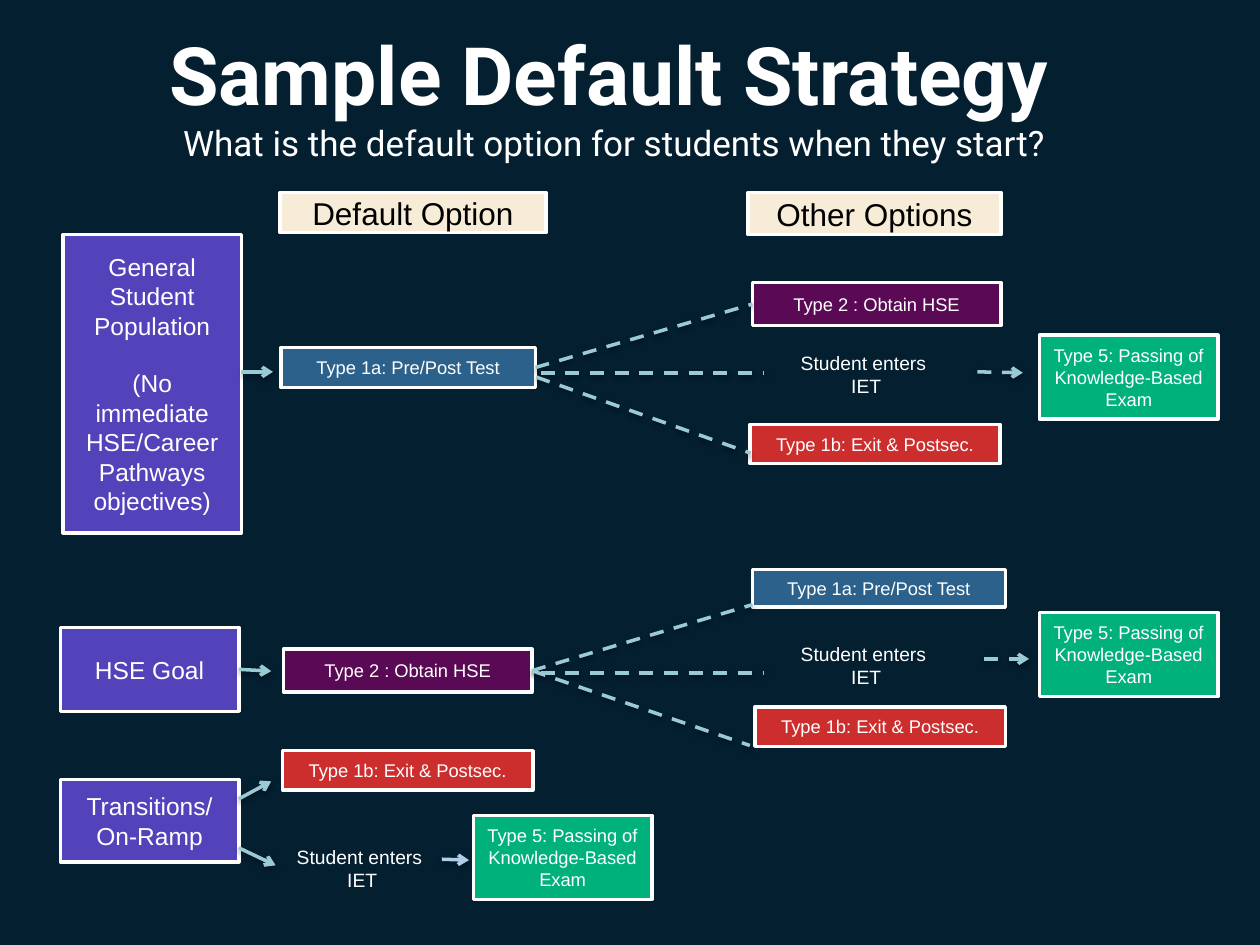
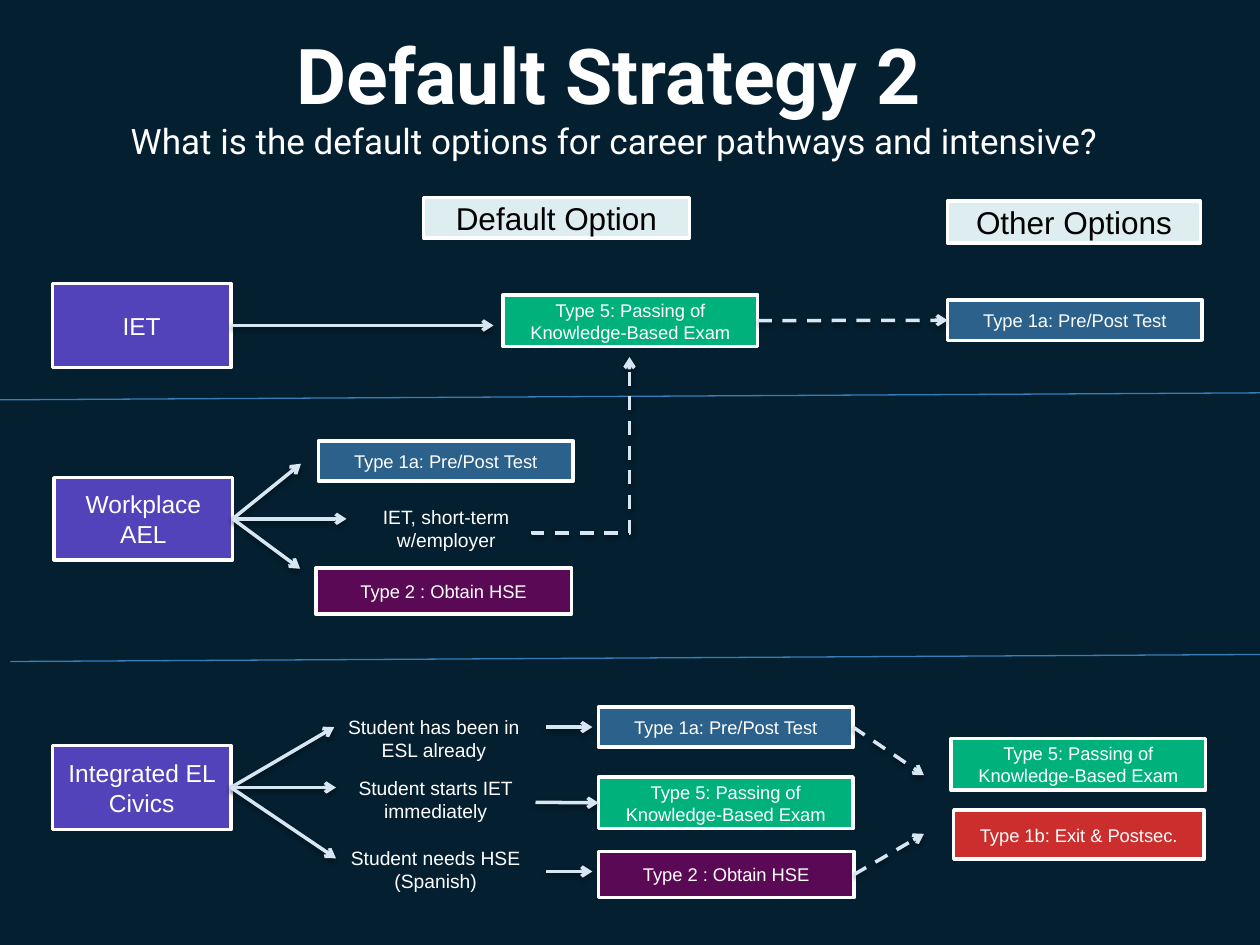
from dataclasses import dataclass

import pptx
import pptx.dml.color
import pptx.enum.dml
import pptx.enum.shapes
import pptx.enum.text
import pptx.oxml
import pptx.oxml.ns
import pptx.util
from pptx.util import Pt

# Shared look
BACKGROUND = "041F30"
WHITE = "FFFFFF"
BLACK = "000000"
TEAL_LINE = "9ACAD3"
BLUE_LINE = "AECDE6"
PALE_LINE = "D6E6F2"
DIVIDER = "367EB9"
GROUP_FILL = "5243BB"
SAND = "F7ECD7"
ICE = "DDEDF0"
SNAP = 1.5  # points between a line end and a side's middle that count as joined


@dataclass(frozen=True)
class BoxStyle:
    fill: str
    color: str = WHITE
    size: float = 10.5


@dataclass(frozen=True)
class Box:
    text: str
    style: BoxStyle
    left: float
    top: float
    width: float
    height: float

    def side_middles(self) -> list[tuple[float, float]]:
        """Middles of the top, left, bottom and right sides."""
        middle_x, middle_y = self.left + self.width / 2, self.top + self.height / 2
        return [(middle_x, self.top), (self.left, middle_y),
                (middle_x, self.top + self.height), (self.left + self.width, middle_y)]


@dataclass(frozen=True)
class Caption:
    text: str
    left: float
    top: float
    width: float = 114
    height: float = 34


@dataclass(frozen=True)
class Line:
    begin: tuple[float, float]
    end: tuple[float, float]
    color: str
    arrow: bool = True
    dashed: bool = False
    width: float = 2
    shadow: bool = True


@dataclass(frozen=True)
class TitleText:
    heading: str
    heading_size: float
    subtitle: str


# Kinds of box
def group(text: str, left: float, top: float, height: float = 48) -> Box:
    return Box(text, BoxStyle(GROUP_FILL, size=14), left, top, 102, height)


def header(text: str, fill: str, left: float, top: float,
           width: float, height: float) -> Box:
    return Box(text, BoxStyle(fill, BLACK, 18), left, top, width, height)


def pre_post_test(left: float, top: float, width: float = 145.5, height: float = 23) -> Box:
    return Box("Type 1a: Pre/Post Test", BoxStyle("2B618B"), left, top, width, height)


def exit_postsec(left: float, top: float, height: float = 22.5) -> Box:
    return Box("Type 1b: Exit & Postsec.", BoxStyle("CC2E2E"), left, top, 143, height)


def obtain_hse(left: float, top: float, width: float = 142, height: float = 24.5) -> Box:
    return Box("Type 2 : Obtain HSE", BoxStyle("5A0A54"), left, top, width, height)


def knowledge_exam(left: float, top: float, width: float = 102, height: float = 48) -> Box:
    return Box("Type 5: Passing of Knowledge-Based Exam", BoxStyle("01B17B"),
               left, top, width, height)


# Drawing
def rgb(color: str) -> pptx.dml.color.RGBColor:
    return pptx.dml.color.RGBColor.from_string(color)


def write_text(paragraph, text: str, *, size: float, color: str = WHITE,
               font: str = "Arial", bold: bool = False) -> None:
    """Add centred text; a newline becomes a line break."""
    paragraph.alignment = pptx.enum.text.PP_ALIGN.CENTER
    for index, part in enumerate(text.split("\n")):
        if index:
            paragraph.add_line_break()
        if part:
            run = paragraph.add_run()
            run.text = part
            run.font.size = Pt(size)
            run.font.name = font
            run.font.bold = bold
            run.font.color.rgb = rgb(color)


def prepare_frame(shape):
    text_frame = shape.text_frame
    text_frame.word_wrap = True
    text_frame.auto_size = pptx.enum.text.MSO_AUTO_SIZE.NONE
    text_frame.vertical_anchor = pptx.enum.text.MSO_ANCHOR.MIDDLE
    return text_frame


def place(item: Box | Caption) -> tuple:
    return Pt(item.left), Pt(item.top), Pt(item.width), Pt(item.height)


def draw_title(slide, title: TitleText) -> None:
    shape = slide.shapes.title
    shape.left, shape.top, shape.width, shape.height = Pt(47), Pt(24), Pt(613), Pt(60)
    text_frame = prepare_frame(shape)
    text_frame.margin_left = text_frame.margin_right = Pt(7.2)
    text_frame.margin_top = text_frame.margin_bottom = Pt(7.2)
    paragraph = text_frame.paragraphs[0]
    paragraph.line_spacing = 1.0
    write_text(paragraph, title.heading + " \n", size=title.heading_size,
               font="Roboto", bold=True)
    write_text(paragraph, title.subtitle, size=20, font="Roboto")


def draw_box(slide, box: Box):
    shape = slide.shapes.add_shape(pptx.enum.shapes.MSO_SHAPE.RECTANGLE, *place(box))
    shape.shadow.inherit = False
    shape.fill.solid()
    shape.fill.fore_color.rgb = rgb(box.style.fill)
    shape.line.color.rgb = rgb(WHITE)
    shape.line.width = Pt(2)
    text_frame = prepare_frame(shape)
    for index, text in enumerate(box.text.split("\n")):
        paragraph = text_frame.add_paragraph() if index else text_frame.paragraphs[0]
        if index:
            paragraph.space_before = Pt(16)
        write_text(paragraph, text, size=box.style.size, color=box.style.color)
    return shape


def draw_caption(slide, caption: Caption) -> None:
    text_frame = prepare_frame(slide.shapes.add_textbox(*place(caption)))
    write_text(text_frame.paragraphs[0], caption.text, size=11)


def format_line(connector, line: Line) -> None:
    connector.line.color.rgb = rgb(line.color)
    connector.line.width = Pt(line.width)
    if line.dashed:
        connector.line.dash_style = pptx.enum.dml.MSO_LINE.DASH
    namespace = pptx.oxml.ns.nsdecls("a")
    properties = connector.element.spPr
    if line.arrow:
        properties.find(pptx.oxml.ns.qn("a:ln")).append(
            pptx.oxml.parse_xml(f'<a:tailEnd {namespace} type="arrow"/>'))
    shadow = ('<a:outerShdw blurRad="39370" dist="20320" dir="5400000" rotWithShape="0">'
              '<a:srgbClr val="000000"><a:alpha val="38000"/></a:srgbClr></a:outerShdw>')
    properties.append(pptx.oxml.parse_xml(
        f'<a:effectLst {namespace}>{shadow if line.shadow else ""}</a:effectLst>'))


def add_line(slide, line: Line, kind):
    return slide.shapes.add_connector(kind, *(Pt(value) for value in line.begin + line.end))


def draw_line(slide, line: Line, drawn_boxes: list) -> None:
    """Draw a straight line, joined to boxes whose side middles it meets."""
    connector = add_line(slide, line, pptx.enum.shapes.MSO_CONNECTOR.STRAIGHT)
    for point, connect in ((line.begin, connector.begin_connect),
                           (line.end, connector.end_connect)):
        for box, shape in drawn_boxes:
            for site, (x, y) in enumerate(box.side_middles()):
                if abs(x - point[0]) <= SNAP and abs(y - point[1]) <= SNAP:
                    connect(shape, site)
    format_line(connector, line)


def draw_elbow(slide, line: Line, adjustment: int) -> None:
    """Draw an elbow line turned by a quarter."""
    connector = add_line(slide, line, pptx.enum.shapes.MSO_CONNECTOR.ELBOW)
    properties = connector.element.spPr
    properties.find(pptx.oxml.ns.qn("a:xfrm")).set("rot", "5400000")
    geometry = properties.find(pptx.oxml.ns.qn("a:prstGeom"))
    for child in list(geometry):
        geometry.remove(child)
    geometry.append(pptx.oxml.parse_xml(
        f'<a:avLst {pptx.oxml.ns.nsdecls("a")}>'
        f'<a:gd name="adj1" fmla="val {adjustment}"/></a:avLst>'))
    format_line(connector, line)


def build_slide(presentation, title: TitleText, boxes: list[Box],
                captions: list[Caption], lines: list[Line]):
    slide = presentation.slides.add_slide(presentation.slide_layouts[0])
    subtitle = slide.placeholders[1].element
    subtitle.getparent().remove(subtitle)
    draw_title(slide, title)
    drawn_boxes = [(box, draw_box(slide, box)) for box in boxes]
    for caption in captions:
        draw_caption(slide, caption)
    for line in lines:
        draw_line(slide, line, drawn_boxes)
    return slide


# Slide 1
def build_sample_strategy(presentation) -> None:
    boxes = [
        header("Default Option", SAND, 160, 110, 152, 23),
        header("Other Options", SAND, 427.5, 110, 144.5, 24),
        group("General Student Population\n"
              "(No immediate HSE/Career Pathways objectives)", 36, 134, 170.5),
        pre_post_test(160.5, 198.5), obtain_hse(430, 161.5),
        exit_postsec(428.5, 242.5), knowledge_exam(594, 191.5),
        group("HSE Goal", 34.5, 358.5),
        obtain_hse(162, 371), pre_post_test(430, 325.5, 144.5, 21.5),
        exit_postsec(431.5, 404), knowledge_exam(594, 350),
        group("Transitions/ On-Ramp", 34.5, 445.5, 47),
        exit_postsec(161.5, 429), knowledge_exam(270.5, 466),
    ]
    captions = [Caption("Student enters \nIET", left, top)
                for left, top in ((438, 197), (438, 363), (150, 479))]
    solid = [((138, 212.5), (156, 212.5)), ((136.5, 382.5), (155, 383.5)),
             ((136.5, 456.5), (155, 446.5)), ((136.5, 484.5), (157.5, 494.5))]
    options = [((306, 210), (430, 173.5)), ((309, 213), (436.5, 213)),
               ((306.5, 215.5), (429, 259)),
               ((304, 383), (430, 345.5)), ((309, 384.5), (436.5, 384.5)),
               ((304, 383), (428.5, 426))]
    to_exam = [((558.5, 212.5), (584.5, 213)), ((562.5, 376.5), (588, 376.5))]
    lines = [Line(*ends, TEAL_LINE) for ends in solid]
    lines += [Line(*ends, TEAL_LINE, arrow=False, dashed=True) for ends in options]
    lines += [Line(*ends, TEAL_LINE, dashed=True) for ends in to_exam]
    lines.append(Line((252.5, 491), (268, 491.5), BLUE_LINE))
    title = TitleText("Sample Default Strategy", 46,
                      "What is the default option for students when they start? ")
    build_slide(presentation, title, boxes, captions, lines)


# Slide 2
def build_second_strategy(presentation) -> None:
    exam_size = (145.5, 29.5)
    hse_size = (146, 26.5)
    boxes = [
        header("Default Option", ICE, 242, 113, 152, 23),
        header("Other Options", ICE, 541.5, 115, 144.5, 24),
        group("IET", 30, 162),
        knowledge_exam(287.5, 168.5, *exam_size), pre_post_test(541.5, 171.5),
        group("Workplace AEL", 31, 273, 47),
        pre_post_test(182, 252), obtain_hse(180.5, 324.5, *hse_size),
        group("Integrated EL Civics", 30, 426),
        pre_post_test(342, 404), knowledge_exam(342, 444, *exam_size),
        obtain_hse(342, 486.5, *hse_size),
        knowledge_exam(543.5, 422, *exam_size), exit_postsec(545, 463, 28),
    ]
    captions = [
        Caption("IET, short-term w/employer", 198, 285),
        Caption("Student has been in ESL already", 191, 405),
        Caption("Student starts IET immediately", 192, 439.5),
        Caption("Student needs HSE (Spanish)", 192, 480),
    ]
    workplace, civics = (133, 296.5), (132, 450)
    solid = [((132, 186), (282, 186)), ((306, 458.5), (342, 458.5)),
             ((312, 415.5), (338.5, 415.5)), ((312, 498), (338.5, 498))]
    solid += [(workplace, end) for end in ((172, 265), (198, 296.5), (171.5, 325))]
    solid += [(civics, end) for end in ((191, 415.5), (192, 450), (192, 490.5))]
    dashed = [((433, 183), (541.5, 183)), ((487.5, 415.5), (528, 443)),
              ((488, 499.5), (528, 476.5))]
    dividers = [((0, 228.5), (720, 224.5)), ((6, 378), (720, 374))]
    lines = [Line(*ends, PALE_LINE) for ends in solid]
    lines += [Line(*ends, PALE_LINE, dashed=True) for ends in dashed]
    lines += [Line(*ends, DIVIDER, arrow=False, width=0.75, shadow=False)
              for ends in dividers]
    title = TitleText("Default Strategy 2", 44,
                      "What is the default options for career pathways and intensive? ")
    slide = build_slide(presentation, title, boxes, captions, lines)
    draw_elbow(slide, Line((381.7, 281.5), (282.3, 226), PALE_LINE, dashed=True), -1200)


def main() -> None:
    presentation = pptx.Presentation()
    presentation.slide_width, presentation.slide_height = Pt(720), Pt(540)
    background = presentation.slide_master.background.fill
    background.solid()
    background.fore_color.rgb = rgb(BACKGROUND)
    build_sample_strategy(presentation)
    build_second_strategy(presentation)
    presentation.save("out.pptx")


if __name__ == "__main__":
    main()
